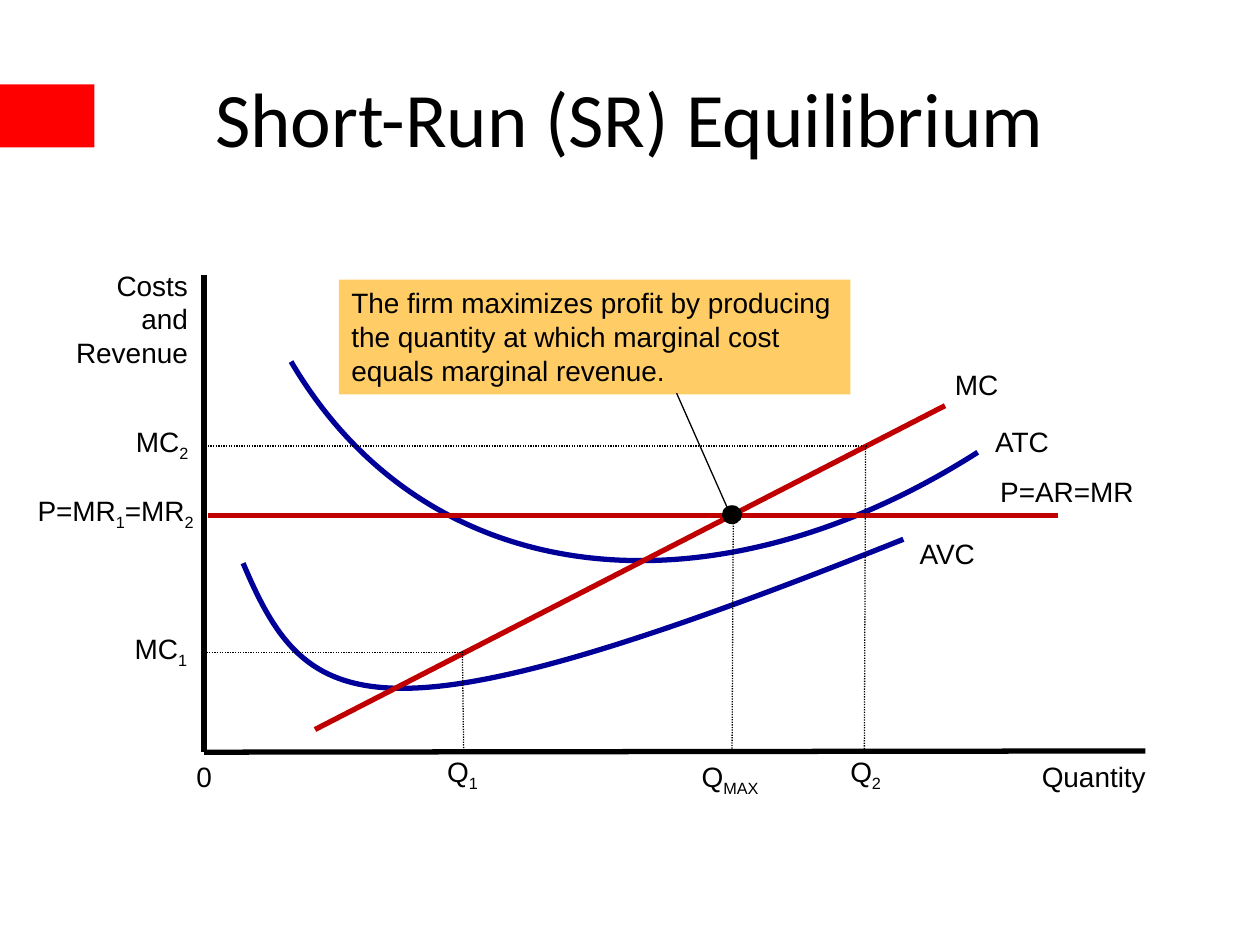
from lxml import etree
from pptx import Presentation
from pptx.dml.color import RGBColor
from pptx.enum import dml, shapes, text
from pptx.oxml.ns import qn
from pptx.util import Inches, Pt

COLORS = {"black": "000000", "accent": "FF0000", "cost": "000099",
          "marginal": "C00000", "callout": "FFCC66"}

TITLE = "Short-Run (SR) Equilibrium"
CALLOUT = ("The firm maximizes profit by producing the quantity at which "
           "marginal cost equals marginal revenue.")

# Start point, two control points, end point
CURVES = {
    "ATC": [(2.31, 2.87), (3.41, 4.74), (5.69, 4.91), (7.76, 3.59)],
    "AVC": [(1.93, 4.47), (2.44, 5.68), (2.94, 5.97), (7.17, 4.28)],
}

# Start, end, colour, width in points
AXES = [
    ((1.62, 2.18), (1.62, 5.97), "black", 3),
    ((1.62, 5.97), (9.09, 5.96), "black", 3),
]
REVENUE_LINES = [
    ((1.65, 4.09), (8.4, 4.09), "marginal", 3),
    ((2.5, 5.79), (7.5, 3.22), "marginal", 3),
]
GUIDES = [
    ((1.64, 5.18), (3.69, 5.18)),
    ((1.65, 3.54), (6.89, 3.54)),
    ((6.87, 3.54), (6.86, 5.97)),
    ((3.67, 5.17), (3.68, 5.97)),
    ((5.82, 4.09), (5.81, 5.98)),
]

# Left, top, width, then pieces: every second piece is a subscript
LABELS = [
    (8.17, 5.98, 1.1, ["Quantity"]),
    (1.46, 5.98, 0.33, ["0"]),
    (7.8, 3.32, 0.63, ["ATC"]),
    (7.2, 4.21, 0.64, ["AVC"]),
    (7.84, 3.72, 1.27, ["P=AR=MR"]),
    (0.2, 3.87, 1.48, ["P=MR", "1", "=MR", "2"]),
    (7.48, 2.87, 0.55, ["MC"]),
    (0.97, 4.96, 0.63, ["MC", "1"]),
    (0.98, 3.32, 0.63, ["MC", "2"]),
    (3.45, 5.94, 0.46, ["Q", "1"]),
    (5.47, 5.98, 0.7, ["Q", "MAX"]),
    (6.65, 5.94, 0.46, ["Q", "2"]),
]
AXIS_TITLE = ["Costs", "and", "Revenue"]


def color(name):
    return RGBColor.from_string(COLORS[name])


def style_font(font, size=16, name="Arial"):
    font.size, font.name = Pt(size), name
    font.color.rgb = color("black")


def add_line(slide, start, end, ink="black", width=0.75, dotted=False):
    line = slide.shapes.add_connector(
        shapes.MSO_CONNECTOR.STRAIGHT, *map(Inches, start + end))
    line.line.color.rgb = color(ink)
    line.line.width = Pt(width)
    if dotted:
        line.line.dash_style = dml.MSO_LINE.ROUND_DOT
    etree.SubElement(line._element.spPr, qn("a:effectLst"))


def add_curve(slide, points):
    start, *rest = [tuple(map(Inches, point)) for point in points]
    builder = slide.shapes.build_freeform(*start)
    builder.add_line_segments(rest, close=False)
    curve = builder.convert_to_shape()
    # Turn the three straight segments into one cubic Bézier
    segments = curve._element.xpath(".//a:lnTo")
    outline = segments[0].getparent()
    bezier = etree.SubElement(outline, qn("a:cubicBezTo"))
    for segment in segments:
        bezier.append(segment[0])
        outline.remove(segment)
    curve.fill.background()
    curve.line.color.rgb = color("cost")
    curve.line.width = Pt(3)
    curve.shadow.inherit = False


def add_block(slide, kind, left, top, width, height, ink):
    block = slide.shapes.add_shape(
        kind, *map(Inches, (left, top, width, height)))
    block.fill.solid()
    block.fill.fore_color.rgb = color(ink)
    block.line.fill.background()
    block.shadow.inherit = False
    return block


def add_box(slide, left, top, width, height=0.37):
    box = slide.shapes.add_textbox(*map(Inches, (left, top, width, height)))
    box.text_frame.word_wrap = False
    return box


def add_label(slide, left, top, width, pieces):
    para = add_box(slide, left, top, width).text_frame.paragraphs[0]
    for index, piece in enumerate(pieces):
        span = para.add_run()
        span.text = piece
        style_font(span.font)
        if index % 2:
            span._r.get_or_add_rPr().set("baseline", "-25000")


def main():
    deck = Presentation()
    deck.slide_width, deck.slide_height = Inches(10), Inches(7.5)
    slide = deck.slides.add_slide(deck.slide_layouts[5])

    # Title and accent block
    add_block(slide, shapes.MSO_SHAPE.RECTANGLE, 0, 0.67, 0.75, 0.5, "accent")
    title = slide.shapes.title
    title.left, title.top = Inches(0.5), Inches(0.3)
    title.width, title.height = Inches(9), Inches(1.25)
    title.text_frame.text = TITLE
    title.text_frame.vertical_anchor = text.MSO_ANCHOR.MIDDLE
    heading = title.text_frame.paragraphs[0]
    heading.alignment = text.PP_ALIGN.CENTER
    style_font(heading.runs[0].font, 44, "Calibri")

    # Axes, curves and guides
    for axis in AXES:
        add_line(slide, *axis)
    for points in CURVES.values():
        add_curve(slide, points)
    for line in REVENUE_LINES:
        add_line(slide, *line)
    for start, end in GUIDES:
        add_line(slide, start, end, dotted=True)

    # Labels
    axis_title = add_box(slide, 0.49, 2.08, 1.1, 1.02)
    axis_title.text_frame.text = "\n".join(AXIS_TITLE)
    for para in axis_title.text_frame.paragraphs:
        para.alignment = text.PP_ALIGN.RIGHT
        style_font(para.runs[0].font)
    for label in LABELS:
        add_label(slide, *label)

    # Equilibrium point and callout
    add_block(slide, shapes.MSO_SHAPE.OVAL, 5.73, 4.01, 0.16, 0.15, "black")
    callout = add_block(slide, shapes.MSO_SHAPE.RECTANGLE,
                        2.69, 2.22, 4.06, 0.91, "callout")
    callout.text_frame.text = CALLOUT
    callout.text_frame.word_wrap = True
    callout.text_frame.vertical_anchor = text.MSO_ANCHOR.TOP
    para = callout.text_frame.paragraphs[0]
    para.alignment = text.PP_ALIGN.LEFT
    style_font(para.runs[0].font)
    add_line(slide, (5.79, 4.07), (5.37, 3.12))

    deck.save("out.pptx")


if __name__ == "__main__":
    main()
